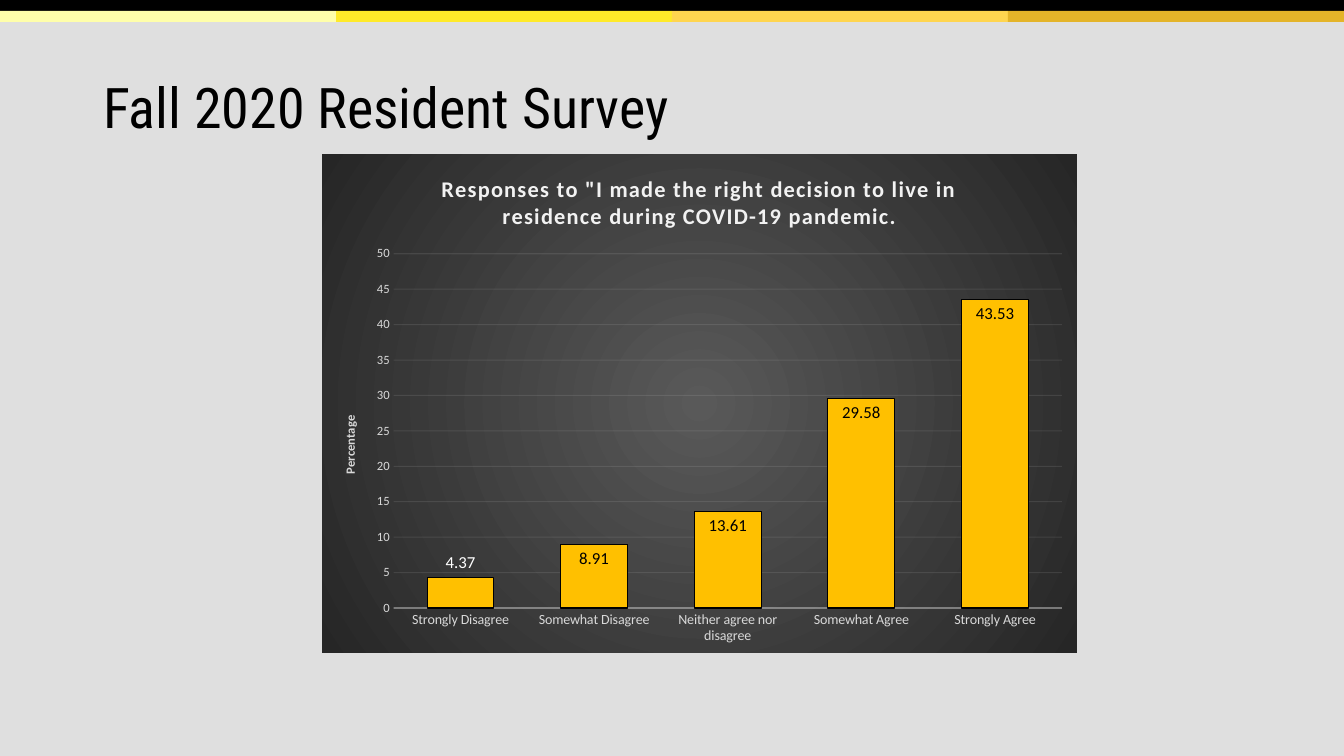
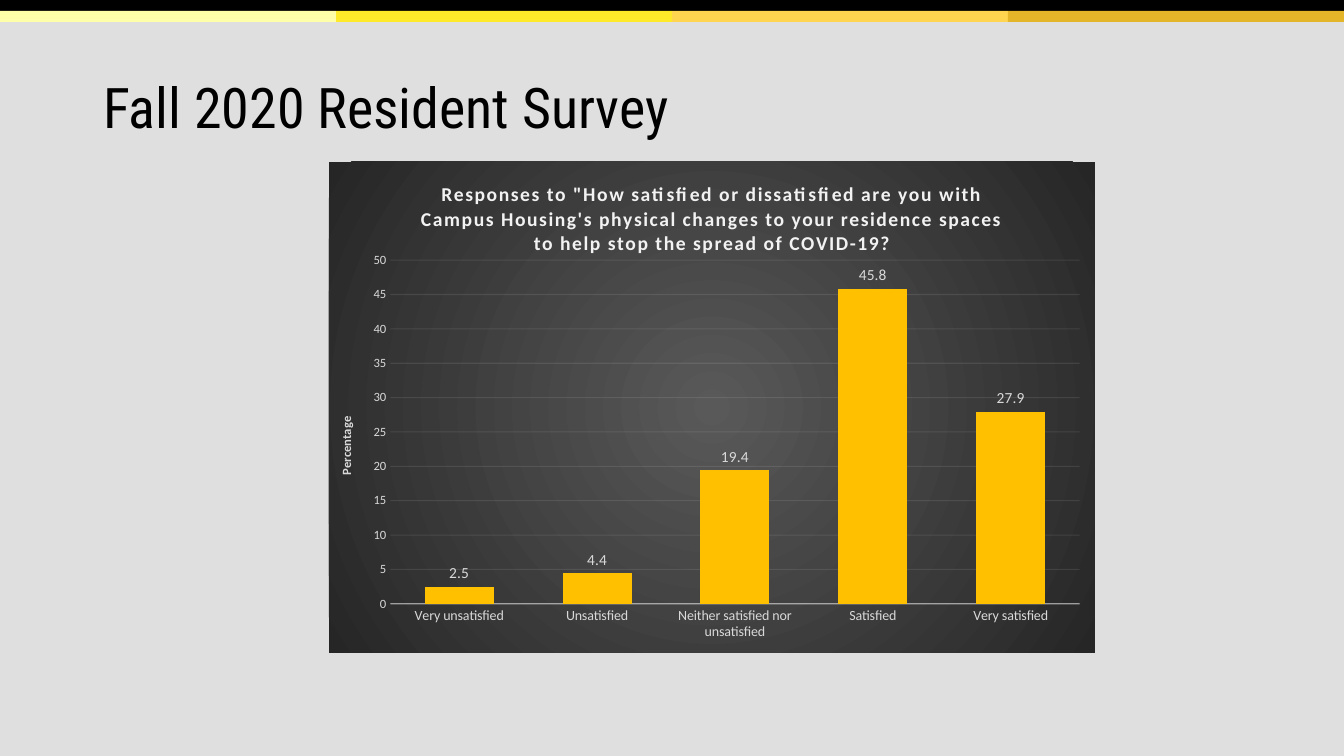
"""Build two survey slides, each with a title and a column chart."""
from lxml.etree import SubElement
from pptx import Presentation
from pptx.chart.data import CategoryChartData
from pptx.dml.color import RGBColor
from pptx.enum.chart import XL_CHART_TYPE as ChartType
from pptx.enum.chart import XL_LABEL_POSITION as LabelPosition
from pptx.enum.chart import XL_TICK_MARK as TickMark
from pptx.enum.shapes import MSO_SHAPE as Preset
from pptx.enum.text import MSO_ANCHOR as Anchor
from pptx.enum.text import MSO_AUTO_SIZE as AutoSize
from pptx.enum.text import PP_ALIGN as Align
from pptx.oxml import parse_xml
from pptx.oxml.ns import nsdecls, qn
from pptx.util import Emu, Pt

WIDTH, HEIGHT = 1344, 756
COLORS = {
    "background": "DFDFDF",
    "black": "000000",
    "white": "FFFFFF",
    "pale_yellow": "FFFFAA",
    "yellow": "FFEA29",
    "amber": "FFD54F",
    "gold": "E4B429",
    "bar": "FFC000",
    "chart_center": "595959",
    "chart_edge": "262626",
    "chart_title": "F2F2F2",
    "chart_text": "D9D9D9",
}
STRIPES = ["pale_yellow", "yellow", "amber", "gold"]
TITLE_FONT, CHART_FONT = "Roboto Condensed", "Calibri"

SURVEYS = [
    {
        "box": (322, 154, 755, 499),
        "plot": (0.095, 0.2, 0.885, 0.71),
        "title": 'Responses to "I made the right decision to live in '
                 "residence during COVID-19 pandemic.",
        "title_size": 16,
        "answers": {
            "Strongly Disagree": 4.37,
            "Somewhat Disagree": 8.91,
            "Neither agree nor disagree": 13.61,
            "Somewhat Agree": 29.58,
            "Strongly Agree": 43.53,
        },
        "outline": "black",
        "labels": (LabelPosition.INSIDE_END, 12, "black"),
        "first_label": (LabelPosition.OUTSIDE_END, 12, "white"),
    },
    {
        "box": (329, 162, 766, 491),
        "plot": (0.08, 0.2, 0.9, 0.7),
        "title": 'Responses to "How satisfied or dissatisfied are you with '
                 "Campus Housing's physical changes to your residence spaces "
                 "to help stop the spread of COVID-19?",
        "title_size": 14,
        "answers": {
            "Very unsatisfied": 2.5,
            "Unsatisfied": 4.4,
            "Neither satisfied nor unsatisfied": 19.4,
            "Satisfied": 45.8,
            "Very satisfied": 27.9,
        },
        "outline": None,
        "labels": (LabelPosition.OUTSIDE_END, 11, "chart_text"),
        "first_label": None,
    },
]


def px(length):
    return Emu(round(length * 12192000 / WIDTH))


def rgb(name):
    return RGBColor.from_string(COLORS[name])


def style_font(font, size, color, name=CHART_FONT, bold=False):
    font.name = name
    font.size = Pt(size)
    font.bold = bold
    font.color.rgb = rgb(color)


def style_line(line, color, width, opacity=100):
    line.width = Pt(width)
    line.color.rgb = rgb(color)
    if opacity < 100:
        color_element = line._get_or_add_ln().find(".//" + qn("a:srgbClr"))
        SubElement(color_element, qn("a:alpha")).set("val", str(opacity * 1000))


def add_band(slide, layout, color, left, top, width, height):
    band = slide.shapes.add_shape(Preset.RECTANGLE, px(left), px(top), px(width), px(height))
    band.shadow.inherit = False
    band.fill.solid()
    band.fill.fore_color.rgb = rgb(color)
    band.line.fill.background()
    layout.shapes.element.append(band.element)


def decorate_layout(slide, layout):
    for placeholder in list(layout.placeholders)[1:]:
        placeholder.element.getparent().remove(placeholder.element)
    add_band(slide, layout, "black", 0, 0, WIDTH, 13)
    stripe_width = WIDTH // len(STRIPES)
    for index, color in enumerate(STRIPES):
        add_band(slide, layout, color, index * stripe_width, 11, stripe_width, 11)


def set_title(slide, text):
    title = slide.shapes.title
    title.left, title.top, title.width, title.height = map(px, (93, 80, 1159, 60))
    frame = title.text_frame
    frame.auto_size = AutoSize.NONE
    frame.vertical_anchor = Anchor.MIDDLE
    paragraph = frame.paragraphs[0]
    paragraph.alignment = Align.LEFT
    paragraph.line_spacing = 0.9
    run = paragraph.add_run()
    run.text = text
    style_font(run.font, 40, "black", TITLE_FONT)


def add_chart_run(frame, text, size, color):
    run = frame.paragraphs[0].add_run()
    run.text = text
    style_font(run.font, size, color, bold=True)
    return run


def fill_chart_area(chart):
    stops = "".join(
        f'<a:gs pos="{position}"><a:srgbClr val="{COLORS[color]}"/></a:gs>'
        for position, color in ((0, "chart_center"), (100000, "chart_edge"))
    )
    properties = parse_xml(
        f'<c:spPr {nsdecls("c", "a")}><a:gradFill><a:gsLst>{stops}</a:gsLst>'
        '<a:path path="circle"><a:fillToRect l="50000" t="50000" r="50000" b="50000"/>'
        "</a:path></a:gradFill><a:ln><a:noFill/></a:ln></c:spPr>"
    )
    chart.element.find(qn("c:chart")).addnext(properties)


def place_plot(chart, fractions):
    plot_area = chart.element.find(".//" + qn("c:plotArea"))
    for layout in plot_area.findall(qn("c:layout")):
        plot_area.remove(layout)
    sizes = "".join(f'<c:{key} val="{value}"/>' for key, value in zip("xywh", fractions))
    plot_area.insert(0, parse_xml(
        f'<c:layout {nsdecls("c")}><c:manualLayout><c:layoutTarget val="inner"/>'
        f'<c:xMode val="edge"/><c:yMode val="edge"/>{sizes}</c:manualLayout></c:layout>'
    ))


def style_axes(chart):
    category_axis, value_axis = chart.category_axis, chart.value_axis
    for axis, size in ((category_axis, 10), (value_axis, 9)):
        axis.major_tick_mark = axis.minor_tick_mark = TickMark.NONE
        style_font(axis.tick_labels.font, size, "chart_text")
    style_line(category_axis.format.line, "chart_title", 1, 54)
    value_axis.minimum_scale, value_axis.maximum_scale = 0, 50
    value_axis.major_unit = 5
    value_axis.format.line.fill.background()
    style_line(value_axis.major_gridlines.format.line, "chart_title", 0.75, 10)
    frame = value_axis.axis_title.text_frame
    frame._txBody.bodyPr.set("rot", "-5400000")
    add_chart_run(frame, "Percentage", 9, "chart_text")


def style_label(label, position, size, color):
    style_font(label.font, size, color)
    label.position = position


def style_bars(chart, survey):
    plot = chart.plots[0]
    plot.gap_width, plot.overlap = 100, -24
    plot.vary_by_categories = False
    series = plot.series[0]
    series.invert_if_negative = False
    series.format.fill.solid()
    series.format.fill.fore_color.rgb = rgb("bar")
    if survey["outline"]:
        style_line(series.format.line, survey["outline"], 0.75)
    series.data_labels.show_value = True
    style_label(series.data_labels, *survey["labels"])
    if survey["first_label"]:
        style_label(series.points[0].data_label, *survey["first_label"])


def add_survey_chart(slide, survey):
    data = CategoryChartData()
    data.categories = list(survey["answers"])
    data.add_series("Series 1", list(survey["answers"].values()))
    frame = slide.shapes.add_chart(ChartType.COLUMN_CLUSTERED, *map(px, survey["box"]), data)
    chart = frame.chart
    chart.has_legend = False
    style_font(chart.font, 10, "black")
    run = add_chart_run(chart.chart_title.text_frame, survey["title"],
                        survey["title_size"], "chart_title")
    run._r.get_or_add_rPr().set("spc", "100")
    fill_chart_area(chart)
    place_plot(chart, survey["plot"])
    style_axes(chart)
    style_bars(chart, survey)


def main():
    presentation = Presentation()
    presentation.slide_width, presentation.slide_height = px(WIDTH), px(HEIGHT)
    background = presentation.slide_master.background.fill
    background.solid()
    background.fore_color.rgb = rgb("background")
    layout = presentation.slide_layouts[5]
    slides = [presentation.slides.add_slide(layout) for _ in SURVEYS]
    decorate_layout(slides[0], layout)
    for slide, survey in zip(slides, SURVEYS):
        set_title(slide, "Fall 2020 Resident Survey")
        add_survey_chart(slide, survey)
    presentation.save("out.pptx")


if __name__ == "__main__":
    main()
